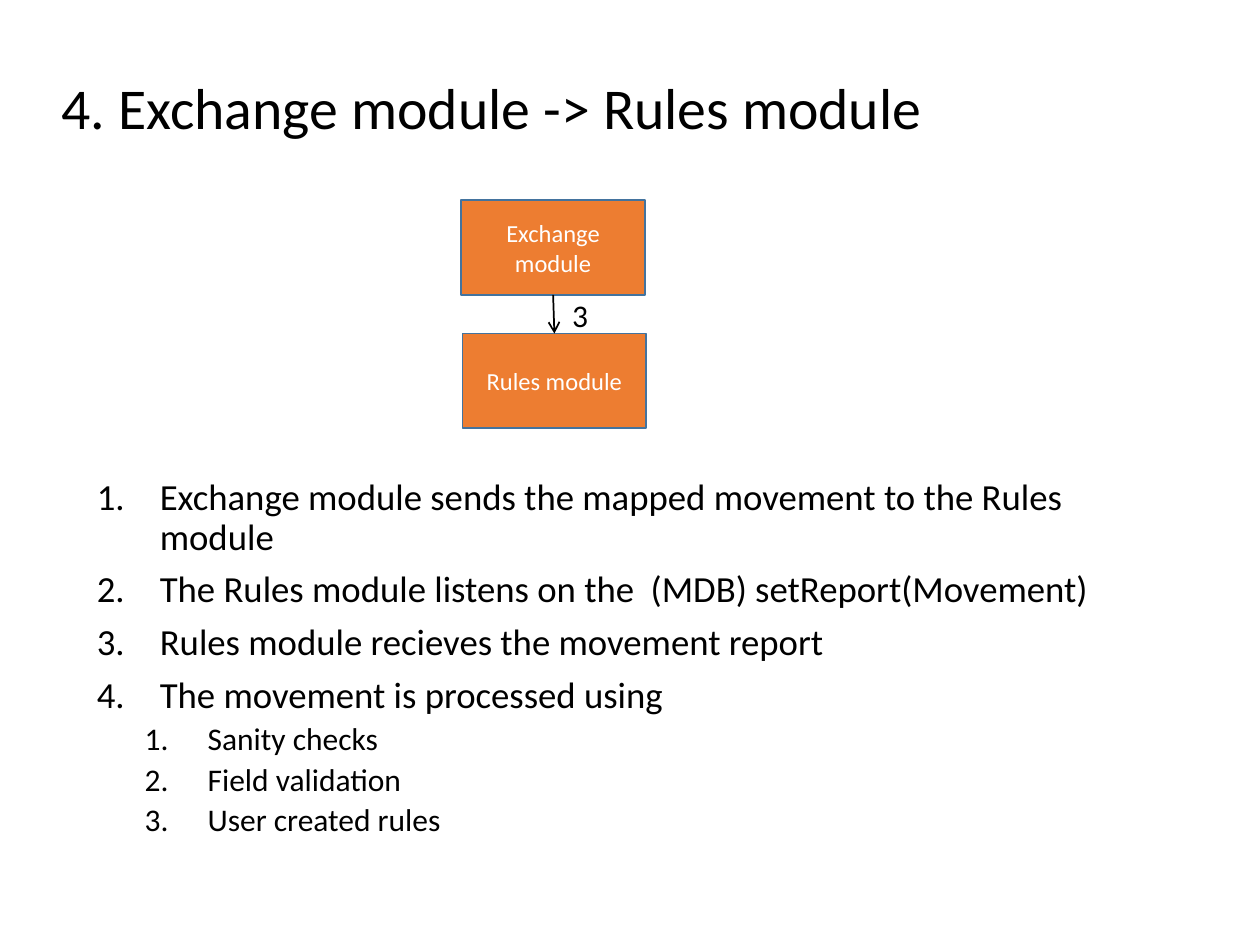
from pptx import Presentation, util as u
from pptx.dml.color import RGBColor
from pptx.enum import shapes, text
from pptx.oxml.ns import qn
from lxml import etree

WIDTH, HEIGHT = 10, 7.5  # inches

THEME = {
    "font": "Calibri",
    "ink": "000000", "box": "ED7D31", "edge": "43739E", "box_text": "FFFFFF",
    "title": 33, "body": 21, "sub": 18, "label": 18, "box_size": 14, "line": 1,
}

# Per list level: type size, space before (pt), left indent (in)
LEVELS = [
    {"size": "body", "before": 7.5, "indent": 0.5},
    {"size": "sub", "before": 3.8, "indent": 0.88},
]
HANGING = 0.5

STEPS = [
    (0, "Exchange module sends the mapped movement to the Rules module"),
    (0, "The Rules module listens on the  (MDB) setReport(Movement)"),
    (0, "Rules module recieves the movement report"),
    (0, "The movement is processed using"),
    (1, "Sanity checks"),
    (1, "Field validation"),
    (1, "User created rules"),
]


def place(x, y, w, h):
    """Turn shares of the slide's size into lengths."""
    return [u.Inches(share * side)
            for share, side in zip((x, y, w, h), (WIDTH, HEIGHT) * 2)]


def color(name):
    return RGBColor.from_string(THEME[name])


def apply(target, formats):
    for name, value in formats.items():
        setattr(target, name, value)


def write(p, words, size, ink="ink", **formats):
    r = p.add_run()
    r.text = words
    apply(r.font, {"name": THEME["font"], "size": u.Pt(THEME[size])})
    r.font.color.rgb = color(ink)
    apply(p, formats)


def add_text(slide, area, **frame):
    tf = slide.shapes.add_textbox(*place(*area)).text_frame
    apply(tf, {"word_wrap": True, **frame})
    return tf


def add_numbered(tf, items):
    for i, (level, words) in enumerate(items):
        p = tf.paragraphs[0] if i == 0 else tf.add_paragraph()
        style = LEVELS[level]
        write(p, words, style["size"], level=level, line_spacing=0.9,
              space_before=u.Pt(style["before"]))
        pPr = p._p.get_or_add_pPr()
        pPr.set("marL", str(u.Inches(style["indent"])))
        pPr.set("indent", str(-u.Inches(HANGING)))
        etree.SubElement(pPr, qn("a:buFont"), typeface="+mj-lt")
        etree.SubElement(pPr, qn("a:buAutoNum"), type="arabicPeriod")


def add_module(slide, area, words):
    sp = slide.shapes.add_shape(shapes.MSO_SHAPE.RECTANGLE, *place(*area))
    sp.shadow.inherit = False
    sp.fill.solid()
    sp.fill.fore_color.rgb = color("box")
    sp.line.color.rgb = color("edge")
    sp.line.width = u.Pt(THEME["line"])
    tf = sp.text_frame
    apply(tf, {"word_wrap": True, "vertical_anchor": text.MSO_ANCHOR.MIDDLE})
    write(tf.paragraphs[0], words, "box_size", "box_text",
          alignment=text.PP_ALIGN.CENTER)
    return sp


def add_arrow(slide, start, end):
    """Arrow from the bottom of one box to the top of the next."""
    line = slide.shapes.add_connector(shapes.MSO_CONNECTOR.STRAIGHT, 0, 0, 0, 0)
    line.begin_connect(start, 2)
    line.end_connect(end, 0)
    line.line.color.rgb = color("ink")
    line.line.width = u.Pt(THEME["line"])
    etree.SubElement(line.line._get_or_add_ln(), qn("a:tailEnd"), type="arrow")
    etree.SubElement(line._element.spPr, qn("a:effectLst"))


def main():
    prs = Presentation()
    prs.slide_width, prs.slide_height = u.Inches(WIDTH), u.Inches(HEIGHT)
    slide = prs.slides.add_slide(prs.slide_layouts[6])

    # Title
    tf = add_text(slide, (0.039, 0.021, 0.862, 0.193),
                  vertical_anchor=text.MSO_ANCHOR.MIDDLE)
    write(tf.paragraphs[0], "4. Exchange module -> Rules module", "title",
          line_spacing=0.9)

    # Numbered steps
    add_numbered(add_text(slide, (0.067, 0.5, 0.874, 0.483)), STEPS)

    # Modules and the call between them
    size = (0.146, 0.1)
    rules = add_module(slide, (0.367, 0.353, *size), "Rules module")
    tf = add_text(slide, (0.444, 0.307, 0.033, 0.053), word_wrap=False,
                  auto_size=text.MSO_AUTO_SIZE.SHAPE_TO_FIT_TEXT)
    write(tf.paragraphs[0], "3", "label", alignment=text.PP_ALIGN.CENTER)
    exchange = add_module(slide, (0.366, 0.212, *size), "Exchange module")
    add_arrow(slide, exchange, rules)

    prs.save("out.pptx")


if __name__ == "__main__":
    main()
